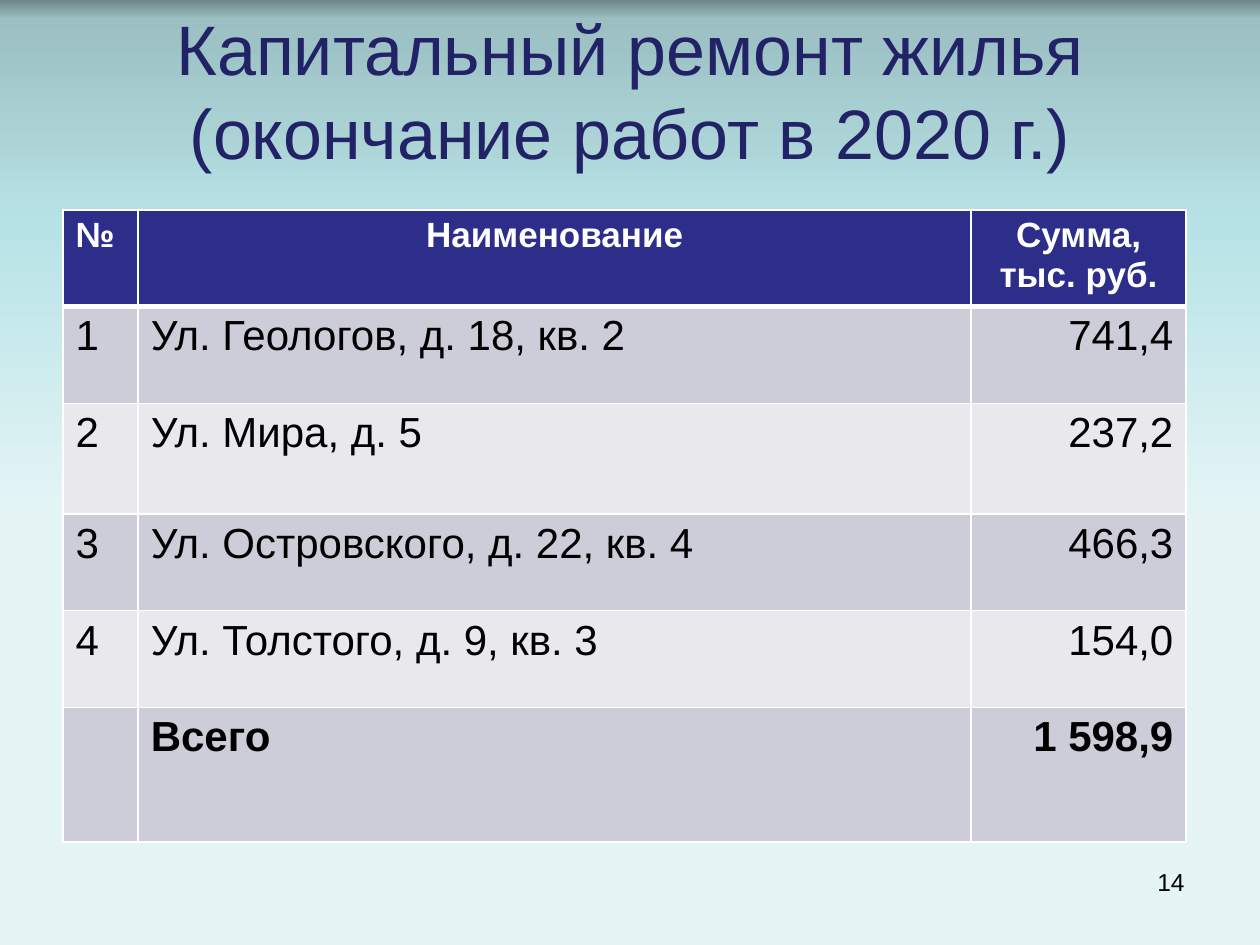
from lxml.etree import SubElement
from pptx import Presentation
from pptx.dml.color import RGBColor
from pptx.enum.text import MSO_ANCHOR, PP_ALIGN
from pptx.oxml.ns import qn
from pptx.util import Pt


def rgb(value):
    return RGBColor.from_string(value)


def style(p, size, color, align, bold=False):
    p.alignment = align
    p.font.name = "Arial"
    p.font.size = Pt(size)
    p.font.bold = bold
    p.font.color.rgb = rgb(color)


prs = Presentation()
prs.slide_width, prs.slide_height = Pt(720), Pt(540)
s = prs.slides.add_slide(prs.slide_layouts[6])

# Background gradient, top to bottom
fill = s.background.fill
fill.gradient()
fill.gradient_angle = 270
stops = next(s.background._cSld.iter(qn("a:gsLst")))
for stop in list(stops):
    stops.remove(stop)
for pos, color in [(0, "6D8688"), (2, "9BBFC2"), (24, "B8E3E6"), (55, "E5F5F6")]:
    gs = SubElement(stops, qn("a:gs"), pos=str(pos * 1000))
    SubElement(gs, qn("a:srgbClr"), val=color)

# Title and page number
texts = [
    ("Капитальный ремонт жилья (окончание работ в 2020 г.)",
     (36, 30, 648, 42), 40, "222267", PP_ALIGN.CENTER, MSO_ANCHOR.MIDDLE),
    ("14", (516, 492, 168, 37.5), 14, "000000", PP_ALIGN.RIGHT, MSO_ANCHOR.TOP),
]
for text, box, size, color, align, anchor in texts:
    tf = s.shapes.add_textbox(*map(Pt, box)).text_frame
    tf.word_wrap = True
    tf.vertical_anchor = anchor
    p = tf.paragraphs[0]
    p.text = text
    style(p, size, color, align)

# Table
rows = [
    ("№", "Наименование", "Сумма, тыс. руб."),
    ("1", "Ул. Геологов, д. 18, кв. 2", "741,4"),
    ("2", "Ул. Мира, д. 5", "237,2"),
    ("3", "Ул. Островского, д. 22, кв. 4", "466,3"),
    ("4", "Ул. Толстого, д. 9, кв. 3", "154,0"),
    ("", "Всего", "1 598,9"),
]
widths = [43, 476, 122.75]
heights = [54, 55.25, 63.25, 55.25, 55.25, 77]
header_aligns = [PP_ALIGN.LEFT, PP_ALIGN.CENTER, PP_ALIGN.CENTER]
body_aligns = [PP_ALIGN.LEFT, PP_ALIGN.LEFT, PP_ALIGN.RIGHT]

table = s.shapes.add_table(len(rows), len(widths), Pt(36), Pt(120),
                           Pt(sum(widths)), Pt(sum(heights))).table
table.first_row = table.horz_banding = False
for column, width in zip(table.columns, widths):
    column.width = Pt(width)
for row, height in zip(table.rows, heights):
    row.height = Pt(height)

for i, row in enumerate(rows):
    header = i == 0
    for j, text in enumerate(row):
        cell = table.cell(i, j)

        # White borders, thick under the header
        tcPr = cell._tc.get_or_add_tcPr()
        for side in "LRTB":
            thick = (i, side) in [(0, "B"), (1, "T")]
            ln = SubElement(tcPr, qn("a:ln" + side), w=str(Pt(3 if thick else 1)))
            line_fill = SubElement(ln, qn("a:solidFill"))
            SubElement(line_fill, qn("a:srgbClr"), val="FFFFFF")

        cell.fill.solid()
        cell.fill.fore_color.rgb = rgb(
            "2D2D8A" if header else "CDCDDA" if i % 2 else "E8E8ED")
        p = cell.text_frame.paragraphs[0]
        p.text = text
        if header:
            style(p, 20, "FFFFFF", header_aligns[j], True)
        else:
            style(p, 24, "000000", body_aligns[j], i == len(rows) - 1)

prs.save("out.pptx")
